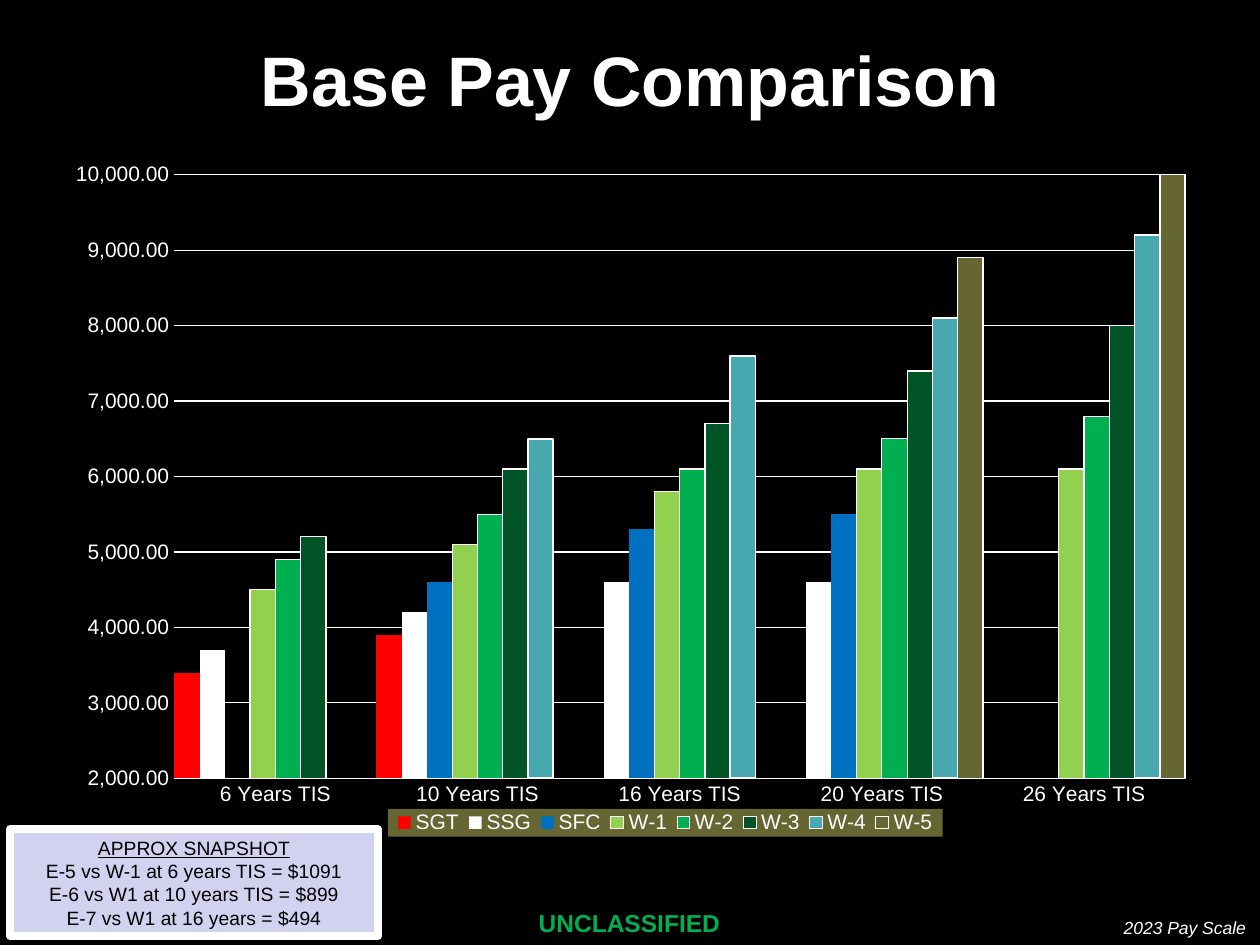
"""Build the base pay comparison slide."""

from dataclasses import dataclass

from lxml.etree import SubElement
from pptx import Presentation
from pptx.chart.data import CategoryChartData
from pptx.dml.color import RGBColor
from pptx.enum.chart import XL_CHART_TYPE, XL_LEGEND_POSITION, XL_TICK_MARK
from pptx.enum.shapes import MSO_SHAPE
from pptx.enum.text import MSO_ANCHOR, PP_ALIGN
from pptx.oxml import parse_xml
from pptx.oxml.ns import nsdecls, qn
from pptx.util import Inches, Pt

FONT = "Arial"
COLORS = {
    "black": "000000",
    "white": "FFFFFF",
    "red": "FF0000",
    "blue": "0070C0",
    "lime": "92D050",
    "green": "00B050",
    "forest": "005426",
    "teal": "48A8B0",
    "olive": "666633",
    "lilac": "D1D1F0",
}


@dataclass
class Rank:
    """One pay series and its column style."""

    name: str
    color: str
    pay: tuple
    edge: float = 0


YEARS = (6, 10, 16, 20, 26)
RANKS = [
    Rank("SGT", "red", (3400, 3900, None, None, None)),
    Rank("SSG", "white", (3700, 4200, 4600, 4600, None)),
    Rank("SFC", "blue", (None, 4600, 5300, 5500, None)),
    Rank("W-1", "lime", (4500, 5100, 5800, 6100, 6100), 0.75),
    Rank("W-2", "green", (4900, 5500, 6100, 6500, 6800), 0.75),
    Rank("W-3", "forest", (5200, 6100, 6700, 7400, 8000), 0.75),
    Rank("W-4", "teal", (None, 6500, 7600, 8100, 9200), 1),
    Rank("W-5", "olive", (None, None, None, 8900, 10100), 0.75),
]
NOTES = [
    "APPROX SNAPSHOT",
    "E-5 vs W-1 at 6 years TIS = $1091",
    "E-6 vs W1 at 10 years TIS = $899",
    "E-7 vs W1 at 16 years = $494",
]


def rgb(name: str) -> RGBColor:
    """Look up a named colour."""
    return RGBColor.from_string(COLORS[name])


def style(font, size: float, color: str = "white", **flags) -> None:
    """Format a font."""
    font.name, font.size = FONT, Pt(size)
    font.color.rgb = rgb(color)
    for key, value in flags.items():
        setattr(font, key, value)


def write(shape, lines: list, size: float, color: str = "white", align=PP_ALIGN.CENTER,
          anchor=MSO_ANCHOR.MIDDLE, wrap: bool = True, **flags) -> None:
    """Fill a shape with formatted lines of text."""
    frame = shape.text_frame
    frame.word_wrap, frame.vertical_anchor = wrap, anchor
    for num, line in enumerate(lines):
        para = frame.add_paragraph() if num else frame.paragraphs[0]
        para.alignment = align
        run = para.add_run()
        run.text = line
        style(run.font, size, color, **flags)


def place(shape, *box: float) -> None:
    """Set left, top, width and height in inches."""
    shape.left, shape.top, shape.width, shape.height = map(Inches, box)


def layout(inner: bool, *box: float):
    """Make a manual chart layout from fractions of the chart."""
    root = parse_xml(f"<c:layout {nsdecls('c')}><c:manualLayout/></c:layout>")
    pairs = [("layoutTarget", "inner")] if inner else []
    pairs += [("xMode", "edge"), ("yMode", "edge"), *zip("xywh", box)]
    for tag, value in pairs:
        SubElement(root[0], qn(f"c:{tag}")).set("val", str(value))
    return root


def draw_chart(slide) -> None:
    """Draw the clustered columns."""
    data = CategoryChartData(number_format="#,##0.00")
    data.categories = [f"{year} Years TIS" for year in YEARS]
    for rank in RANKS:
        data.add_series(rank.name, rank.pay)
    box = map(Inches, (0.42, 1.25, 9.17, 5.5))
    chart = slide.shapes.add_chart(XL_CHART_TYPE.COLUMN_CLUSTERED, *box, data).chart
    chart.has_title = False
    style(chart.font, 10)
    plot = chart.plots[0]
    plot.gap_width, plot.overlap, plot.vary_by_categories = 0, 0, False
    for rank, bars in zip(RANKS, plot.series):
        bars.invert_if_negative = False
        bars.format.fill.solid()
        bars.format.fill.fore_color.rgb = rgb(rank.color)
        if rank.edge:
            bars.format.line.color.rgb = rgb("white")
            bars.format.line.width = Pt(rank.edge)
    for axis in (chart.category_axis, chart.value_axis):
        axis.major_tick_mark = axis.minor_tick_mark = XL_TICK_MARK.NONE
        axis.format.line.fill.background()
        style(axis.tick_labels.font, 12)
    scale = chart.value_axis
    scale.minimum_scale, scale.maximum_scale, scale.major_unit = 2000, 10000, 1000
    scale.tick_labels.number_format = "#,##0.00"
    scale.tick_labels.number_format_is_linked = False
    grid = scale.major_gridlines.format.line
    grid.color.rgb, grid.width = rgb("white"), Pt(0.75)
    draw_key(chart)
    area = chart.element.find(".//" + qn("c:plotArea"))
    for old in area.findall(qn("c:layout")):
        area.remove(old)
    area.insert(0, layout(True, 0.105, 0.025, 0.875, 0.871))


def draw_key(chart) -> None:
    """Add the filled legend under the columns."""
    chart.has_legend = True
    key = chart.legend
    key.position, key.include_in_layout = XL_LEGEND_POSITION.BOTTOM, False
    style(key.font, 12)
    node = chart.element.find(".//" + qn("c:legend"))
    for old in node.findall(qn("c:layout")):
        node.remove(old)
    node.find(qn("c:legendPos")).addnext(layout(False, 0.29, 0.94, 0.48, 0.04))
    fill = parse_xml(
        f"<c:spPr {nsdecls('c', 'a')}><a:solidFill>"
        f"<a:srgbClr val=\"{COLORS['olive']}\"/></a:solidFill></c:spPr>"
    )
    node.find(qn("c:txPr")).addprevious(fill)


def draw_notes(slide) -> None:
    """Draw the framed pay snapshot."""
    box = map(Inches, (0.08, 6.58, 2.92, 0.85))
    card = slide.shapes.add_shape(MSO_SHAPE.RECTANGLE, *box)
    card.shadow.inherit = False
    card.fill.solid()
    card.fill.fore_color.rgb = rgb("lilac")
    card.line.color.rgb, card.line.width = rgb("white"), Pt(4.5)
    write(card, NOTES, 11, "black", wrap=False)
    card.text_frame.paragraphs[0].runs[0].font.underline = True


def main() -> None:
    """Build and save the slide."""
    deck = Presentation()
    deck.slide_width, deck.slide_height = Inches(10), Inches(7.5)
    slide = deck.slides.add_slide(deck.slide_layouts[5])
    slide.background.fill.solid()
    slide.background.fill.fore_color.rgb = rgb("black")
    place(slide.shapes.title, 0, 0, 10, 1.25)
    write(slide.shapes.title, ["Base Pay Comparison"], 40, bold=True)
    mark = slide.shapes.add_textbox(*map(Inches, (0, 6.97, 9.99, 0.52)))
    write(mark, ["UNCLASSIFIED"], 14, "green", anchor=MSO_ANCHOR.BOTTOM, bold=True)
    draw_chart(slide)
    source = slide.shapes.add_textbox(*map(Inches, (8.82, 7.23, 1.18, 0.27)))
    write(source, ["2023 Pay Scale"], 10, align=PP_ALIGN.LEFT,
          anchor=MSO_ANCHOR.TOP, wrap=False, italic=True)
    draw_notes(slide)
    deck.save("out.pptx")


if __name__ == "__main__":
    main()
